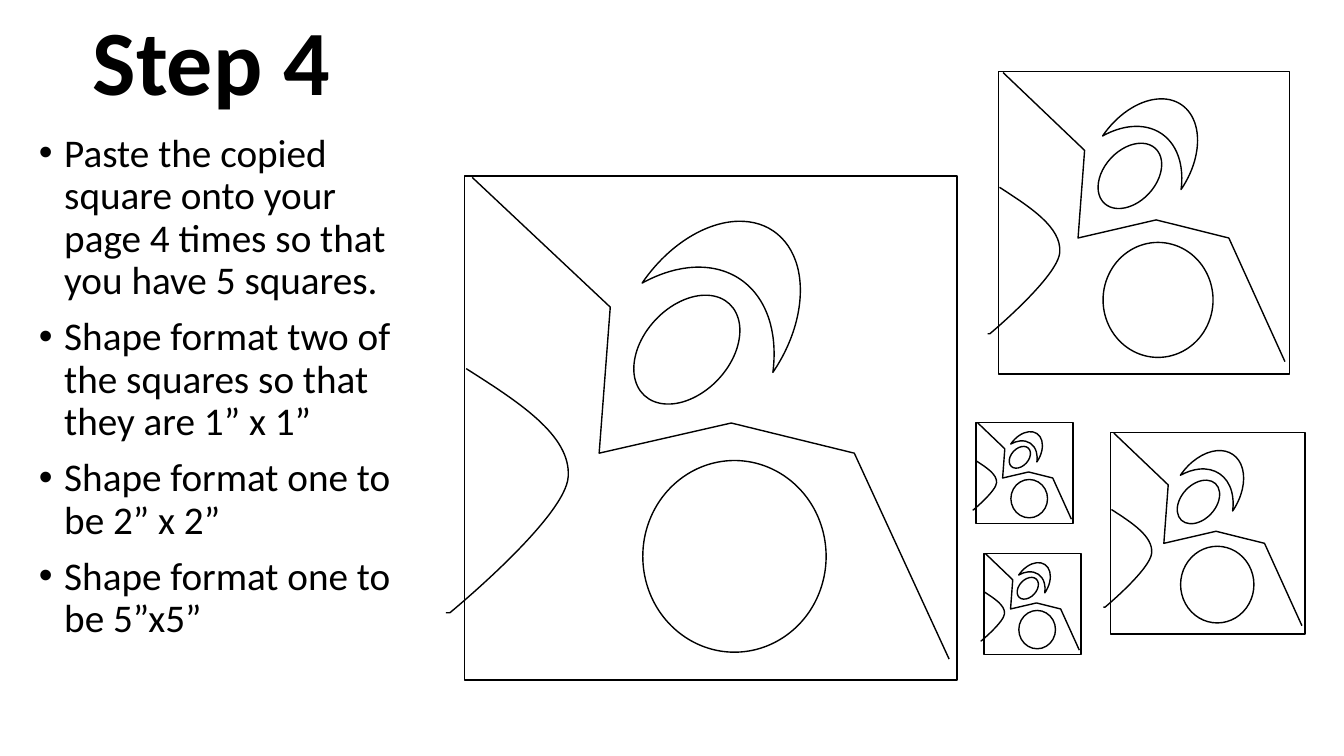
"""Build the Step 4 slide: instructions beside five sizes of one line-art square."""
from lxml import etree
from pptx import Presentation
from pptx import util as u
from pptx.dml.color import RGBColor
from pptx.enum import shapes, text
from pptx.oxml import ns

INK = "000000"
FONT = "Calibri"
TITLE = "Step 4"
STEPS = [
    "Paste the copied square onto your page 4 times so that you have 5 squares.",
    "Shape format two of the squares so that they are 1” x 1”",
    "Shape format one to be 2” x 2”",
    "Shape format one to be 5”x5”",
]

SQUARES = [
    (24.6, 10.65, 2.44, 2.54),
    (24.8, 13.95, 2.44, 2.54),
    (25.16, 1.81, 7.34, 7.62),
    (27.99, 10.9, 4.9, 5.08),
    (11.7, 4.44, 12.42, 12.7),
]

BASE_WIDTH, BASE_HEIGHT = 12.42, 12.7
ZIGZAG = [(0.2, 0.03), (3.68, 3.3), (3.4, 6.98), (6.73, 6.22), (9.83, 6.98), (12.22, 12.17)]
WAVE = [
    (0.05, 4.85), (1.37, 5.69), (2.69, 6.53), (2.62, 7.57),
    (2.57, 8.59), (-0.36, 11), (-0.36, 11), (-0.46, 11),
]
WAVE_CURVES = 2
FIGURES = [
    (shapes.MSO_SHAPE.OVAL, 5.61, 4.37, 3.15, 2.18, 312.9),
    (shapes.MSO_SHAPE.MOON, 6.96, 2.6, 2.95, 3.99, 124.3),
    (shapes.MSO_SHAPE.OVAL, 6.81, 9.58, 4.62, 4.83, 0),
]


def color(value):
    return RGBColor.from_string(value)


def write(para, words, size, bold=False, before=0, bullet=None, indent=0):
    if bullet:
        props = para._p.get_or_add_pPr()
        props.set("marL", str(u.Cm(indent)))
        props.set("indent", str(-u.Cm(indent)))
        etree.SubElement(props, ns.qn("a:buFont")).set("typeface", "Arial")
        etree.SubElement(props, ns.qn("a:buChar")).set("char", bullet)
    para.alignment = text.PP_ALIGN.LEFT
    para.line_spacing = 0.9
    para.space_before = u.Pt(before)
    span = para.add_run()
    span.text = words
    span.font.name = FONT
    span.font.size = u.Pt(size)
    span.font.bold = bold
    span.font.color.rgb = color(INK)


def place(box, left, top, width, height):
    box.left, box.top = u.Cm(left), u.Cm(top)
    box.width, box.height = u.Cm(width), u.Cm(height)


def outline(shape):
    shape.shadow.inherit = False
    shape.fill.background()
    shape.line.color.rgb = color(INK)
    shape.line.width = u.Pt(1)


def bend(shape, curves):
    lines = list(shape._element.iter(ns.qn("a:lnTo")))
    for index in range(curves):
        first, *rest = lines[3 * index:3 * index + 3]
        first.tag = ns.qn("a:cubicBezTo")
        for line in rest:
            first.append(line[0])
            line.getparent().remove(line)


def draw_square(page, left, top, width, height):
    group = page.shapes.add_group_shape().shapes
    scale_x, scale_y = width / BASE_WIDTH, height / BASE_HEIGHT

    def spot(x, y):
        return u.Cm(left + x * scale_x), u.Cm(top + y * scale_y)

    def draw_path(points, curves=0):
        spots = [spot(*point) for point in points]
        builder = group.build_freeform(*spots[0])
        builder.add_line_segments(spots[1:], close=False)
        shape = builder.convert_to_shape()
        bend(shape, curves)
        outline(shape)

    outline(group.add_shape(shapes.MSO_SHAPE.RECTANGLE,
                            u.Cm(left), u.Cm(top), u.Cm(width), u.Cm(height)))
    draw_path(ZIGZAG)
    for kind, x, y, wide, high, turn in FIGURES:
        center_x, center_y = spot(x, y)
        wide, high = u.Cm(wide * scale_y), u.Cm(high * scale_y)
        figure = group.add_shape(kind, center_x - wide // 2, center_y - high // 2, wide, high)
        figure.rotation = turn
        outline(figure)
    draw_path(WAVE, WAVE_CURVES)


def main():
    deck = Presentation()
    deck.slide_width, deck.slide_height = u.Cm(33.87), u.Cm(19.05)
    page = deck.slides.add_slide(deck.slide_layouts[5])

    title = page.shapes.title
    place(title, 2.08, 0.27, 11.66, 3.68)
    title.text_frame.vertical_anchor = text.MSO_ANCHOR.TOP
    write(title.text_frame.paragraphs[0], TITLE, 65.7, bold=True)

    body = page.shapes.add_textbox(u.Cm(0.73), u.Cm(3.24), u.Cm(10.01), u.Cm(15.27))
    frame = body.text_frame
    frame.word_wrap = True
    for index, step in enumerate(STEPS):
        para = frame.add_paragraph() if index else frame.paragraphs[0]
        write(para, step, 28, before=10 if index else 0, bullet="•", indent=0.64)

    for square in SQUARES:
        draw_square(page, *square)

    deck.save("out.pptx")


if __name__ == "__main__":
    main()
